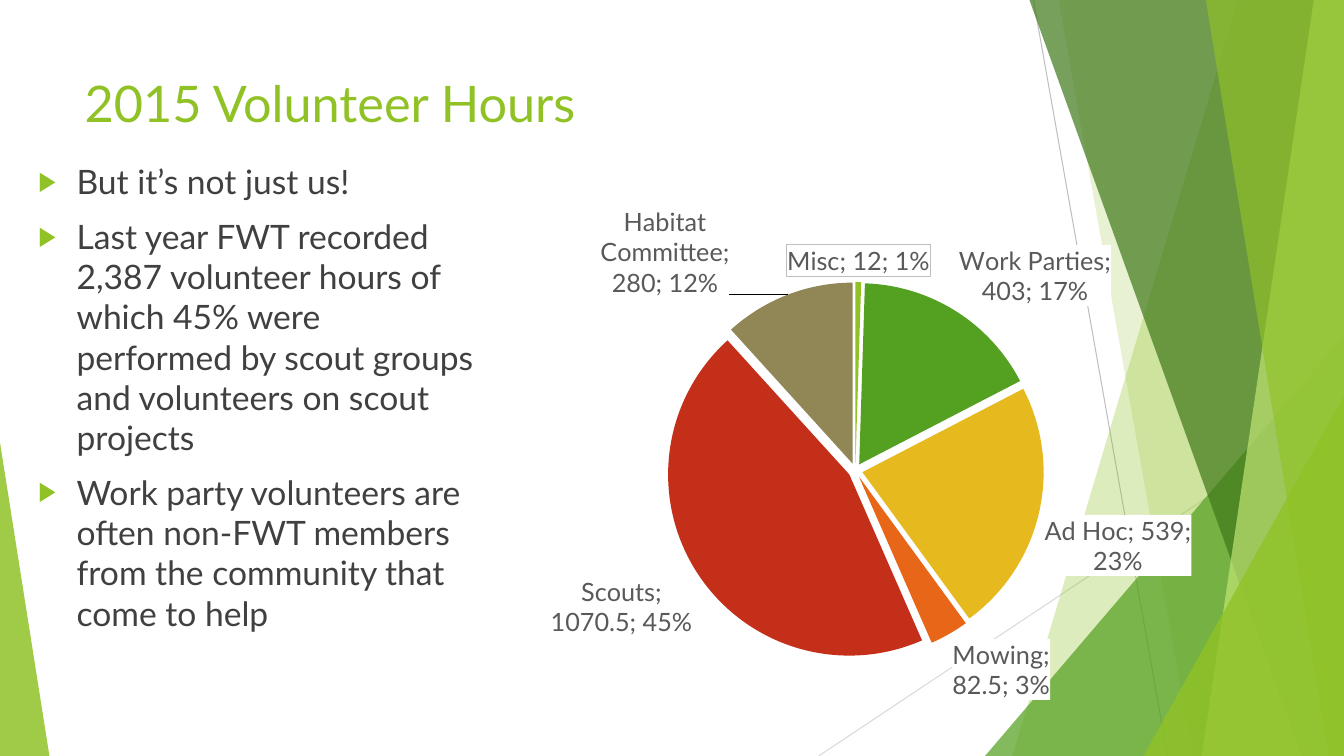
import pptx
import pptx.chart.data
import pptx.dml.color
import pptx.enum.chart
import pptx.enum.shapes
import pptx.enum.text
import pptx.oxml
import pptx.oxml.ns
import pptx.util

Inches = pptx.util.Inches
WIDTH, HEIGHT = 13.33, 7.5
FONT = "Lato"
COLORS = {
    "lime": "90C226", "green": "54A021", "forest": "3F7819", "pale": "C0E474",
    "gold": "E6B91E", "orange": "E76618", "red": "C42F1A", "olive": "918655",
    "text": "404040", "label": "595959", "white": "FFFFFF",
    "line": "BFBFBF", "faint": "D9D9D9",
}


def rgb(name):
    return pptx.dml.color.RGBColor.from_string(COLORS[name])


def xml(text):
    """Parse an XML snippet that may use the a: and c: prefixes."""
    head, tail = text.split(">", 1)
    slash = "/" if head.endswith("/") else ""
    names = pptx.oxml.ns.nsdecls("a", "c")
    return pptx.oxml.parse_xml(f"{head.rstrip('/')} {names}{slash}>{tail}")


def write_text(shape, lines, size, color, bullet=None, indent=0, before=0):
    frame = shape.text_frame
    frame.text = "\n".join(lines)
    frame.word_wrap = True
    frame.auto_size = pptx.enum.text.MSO_AUTO_SIZE.NONE
    frame.vertical_anchor = pptx.enum.text.MSO_ANCHOR.TOP
    for paragraph in frame.paragraphs:
        paragraph.alignment = pptx.enum.text.PP_ALIGN.LEFT
        paragraph.space_before = pptx.util.Pt(before)
        font = paragraph.runs[0].font
        font.name, font.size = FONT, pptx.util.Pt(size)
        font.color.rgb = rgb(color)
        if bullet:
            properties = paragraph._p.get_or_add_pPr()
            properties.set("marL", str(Inches(indent)))
            properties.set("indent", str(-Inches(indent)))
            for part in (f'<a:buClr><a:srgbClr val="{COLORS["lime"]}"/></a:buClr>',
                         '<a:buSzPct val="80000"/>',
                         f'<a:buChar char="{bullet}"/>'):
                properties.append(xml(part))


presentation = pptx.Presentation()
presentation.slide_width, presentation.slide_height = Inches(WIDTH), Inches(HEIGHT)
slide = presentation.slides.add_slide(presentation.slide_layouts[1])
shapes = slide.shapes

# Thin lines behind the facets
for start, end, color in (((10.25, 0), (11.58, HEIGHT), "line"),
                          ((WIDTH, 4.03), (8.12, HEIGHT), "faint")):
    line = shapes.add_connector(pptx.enum.shapes.MSO_CONNECTOR.STRAIGHT,
                                *map(Inches, start + end))
    line.line.color.rgb = rgb(color)
    line.line.width = pptx.util.Pt(0.75)
    line._element.spPr.append(xml("<a:effectLst/>"))

# Facets, back to front: a band runs from its top x and bottom x to the right edge,
# a triangle has a left, top, width and apex share
facets = (
    ("band", (12.28, 10.04), "lime", 30),
    ("band", (10.5, 11.83), "lime", 20),
    ("triangle", (9.77, 3.33, 3.56, 1), "green", 72),
    ("band", (10.21, 12.91), "forest", 70),
    ("band", (13.03, 11.92), "pale", 70),
    ("band", (11.96, 13.18), "lime", 65),
    ("triangle", (11.34, 3.93, 1.99, 1), "lime", 80),
    ("triangle", (0, 4.39, 0.49, 0), "lime", 85),
)
for kind, geometry, color, opacity in facets:
    if kind == "band":
        top_x, bottom_x = geometry
        builder = shapes.build_freeform(Inches(top_x), 0)
        builder.add_line_segments([
            (Inches(x), Inches(y))
            for x, y in ((WIDTH, 0), (WIDTH, HEIGHT), (bottom_x, HEIGHT))], close=True)
        facet = builder.convert_to_shape()
    else:
        left, top, width, apex = geometry
        facet = shapes.add_shape(pptx.enum.shapes.MSO_SHAPE.ISOSCELES_TRIANGLE,
                                 *map(Inches, (left, top, width, HEIGHT - top)))
        facet.adjustments[0] = apex
    facet.shadow.inherit = False
    facet.line.fill.background()
    facet.fill.solid()
    facet.fill.fore_color.rgb = rgb(color)
    facet._element.spPr.find(".//" + pptx.oxml.ns.qn("a:srgbClr")).append(
        xml(f'<a:alpha val="{opacity * 1000}"/>'))

# Title and list, placed above the facets
title, body = shapes.title, slide.placeholders[1]
for placeholder, box in ((title, (0.74, 0.67, 9.4, 1.44)),
                         (body, (0.28, 1.55, 4.52, 5.48))):
    (placeholder.left, placeholder.top,
     placeholder.width, placeholder.height) = map(Inches, box)
    placeholder.element.getparent().append(placeholder.element)
write_text(title, ["2015 Volunteer Hours"], size=36, color="lime")
write_text(body, [
    "But it’s not just us!",
    "Last year FWT recorded 2,387 volunteer hours of which 45% were performed "
    "by scout groups and volunteers on scout projects",
    "Work party volunteers are often non-FWT members from the community "
    "that come to help",
], size=24, color="text", bullet="▶", indent=0.38, before=10)

# Pie of hours by activity
hours = (("Misc", 12, "lime"), ("Work Parties", 403, "green"), ("Ad Hoc", 539, "gold"),
         ("Mowing", 82.5, "orange"), ("Scouts", 1070.5, "red"),
         ("Habitat Committee", 280, "olive"))
data = pptx.chart.data.CategoryChartData()
data.categories = [name for name, value, color in hours]
data.add_series("Hours", [value for name, value, color in hours])
chart = shapes.add_chart(pptx.enum.chart.XL_CHART_TYPE.PIE,
                         *map(Inches, (4.35, 1.78, 7.92, 5.42)), data).chart
chart.has_title = chart.has_legend = False
chart.font.name, chart.font.size = FONT, pptx.util.Pt(18)
chart.font.color.rgb = rgb("label")
chart.element.xpath("c:chart")[0].addnext(
    xml("<c:spPr><a:noFill/><a:ln><a:noFill/></a:ln></c:spPr>"))

plot_area = chart.element.xpath(".//c:plotArea")[0]
for layout in plot_area.xpath("c:layout"):
    plot_area.remove(layout)
plot_area.insert(0, xml(
    '<c:layout><c:manualLayout><c:layoutTarget val="inner"/>'
    '<c:xMode val="edge"/><c:yMode val="edge"/><c:x val="0.286"/><c:y val="0.188"/>'
    '<c:w val="0.472"/><c:h val="0.69"/></c:manualLayout></c:layout>'))

series = plot_area.xpath(".//c:ser")[0]
series.xpath("c:tx")[0].addnext(xml('<c:explosion val="4"/>'))
for point_index, (name, value, color) in enumerate(hours):
    fill = chart.plots[0].series[0].points[point_index].format.fill
    fill.solid()
    fill.fore_color.rgb = rgb(color)

white_fill = f'<a:solidFill><a:srgbClr val="{COLORS["white"]}"/></a:solidFill>'
border = f'<a:ln w="9525"><a:solidFill><a:srgbClr val="{COLORS["line"]}"/></a:solidFill></a:ln>'
plain = "<a:ln><a:noFill/></a:ln>"
label_text = (
    '<c:txPr><a:bodyPr/><a:p><a:pPr><a:defRPr sz="1800"><a:solidFill>'
    f'<a:srgbClr val="{COLORS["label"]}"/></a:solidFill><a:latin typeface="{FONT}"/>'
    '</a:defRPr></a:pPr><a:endParaRPr lang="en-US"/></a:p></c:txPr>')
label_parts = (
    '<c:dLblPos val="outEnd"/><c:showLegendKey val="0"/><c:showVal val="1"/>'
    '<c:showCatName val="1"/><c:showSerName val="0"/><c:showPercent val="1"/>'
    '<c:showBubbleSize val="0"/><c:separator>; </c:separator>')
shift = ('<c:layout><c:manualLayout><c:x val="-0.07"/><c:y val="0.015"/>'
         '</c:manualLayout></c:layout>')
special_labels = "".join(
    f'<c:dLbl><c:idx val="{index}"/>{layout}<c:spPr>{white_fill}{outline}</c:spPr>'
    f'{label_text}{label_parts}</c:dLbl>'
    for index, layout, outline in ((0, "", border), (5, shift, plain)))
series.xpath("c:cat")[0].addprevious(xml(
    f'<c:dLbls>{special_labels}<c:spPr>{white_fill}{plain}</c:spPr>'
    f'{label_text}{label_parts}<c:showLeaderLines val="1"/></c:dLbls>'))

presentation.save("out.pptx")
